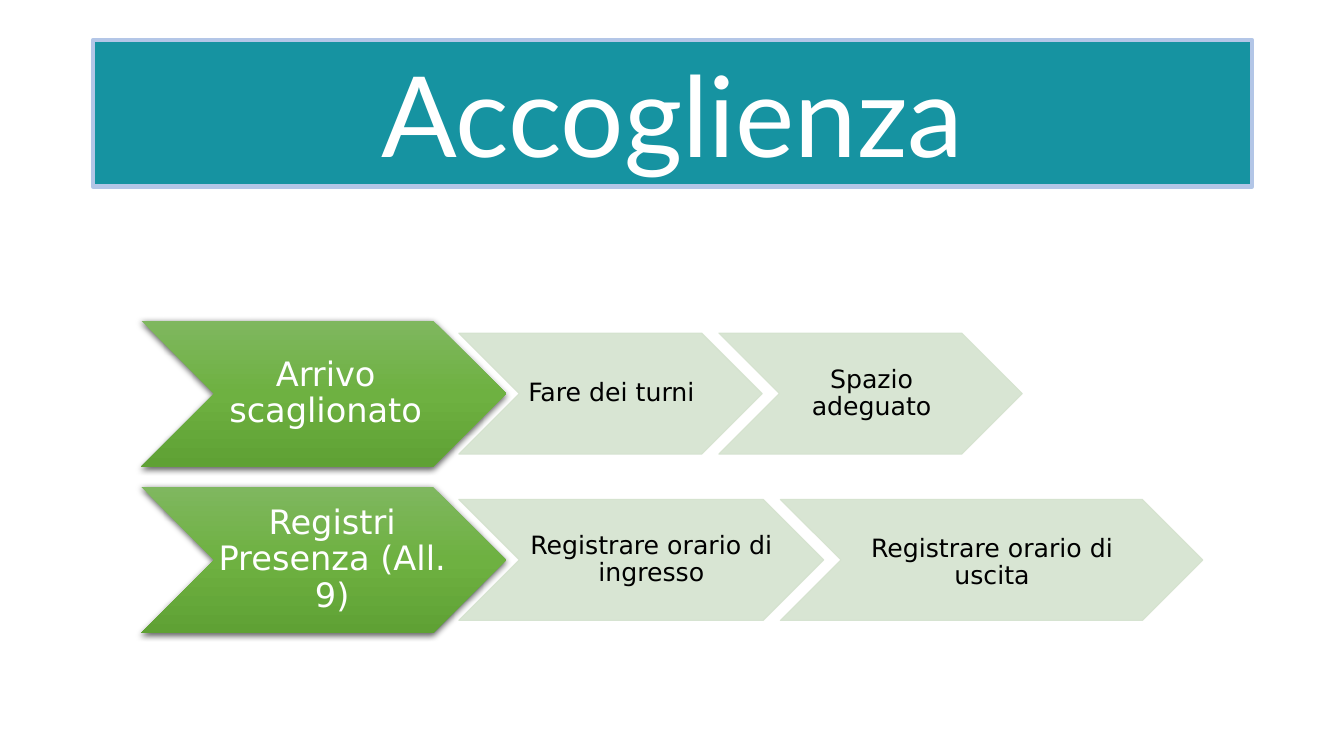
from lxml import etree
from pptx import Presentation, util as u
from pptx.dml.color import RGBColor
from pptx.enum import shapes, text
from pptx.oxml import parse_xml
from pptx.oxml.ns import nsdecls, qn


def rgb(value):
    return RGBColor.from_string(value)


def write(sp, words, size, font, color, anchor, insets):
    tf = sp.text_frame
    tf.word_wrap = True
    tf.vertical_anchor = anchor
    tf.margin_left, tf.margin_top, tf.margin_right, tf.margin_bottom = map(u.Inches, insets)
    p = tf.paragraphs[0]
    p.text = words
    p.alignment = text.PP_ALIGN.CENTER
    p.line_spacing = 0.9
    p.font.size = u.Pt(size)
    p.font.name = font
    p.font.color.rgb = rgb(color)


prs = Presentation()
prs.slide_width, prs.slide_height = u.Inches(13.33), u.Inches(7.5)
s = prs.slides.add_slide(prs.slide_layouts[6])

# Title banner
sp = s.shapes.add_shape(shapes.MSO_SHAPE.RECTANGLE, *map(u.Inches, (0.92, 0.4, 11.5, 1.45)))
sp.shadow.inherit = False
sp.fill.solid()
sp.fill.fore_color.rgb = rgb("1693A1")
sp.line.color.rgb = rgb("B3C6E7")
sp.line.width = u.Pt(3)
write(sp, "Accoglienza", 80, "Lato", "FFFFFF", text.MSO_ANCHOR.BOTTOM, (0.1, 0.05, 0.1, 0.05))

# Process rows: words, chevron width, text width, text shift (x, y)
rows = [
    [("Arrivo scaglionato", 3.62, 2.17, 0, 0),
     ("Fare dei turni", 3.01, 1.8, 0, 0),
     ("Spazio adeguato", 3.01, 1.8, 0, 0)],
    [("Registri Presenza (All. 9)", 3.62, 2.3, 0, 0),
     ("Registrare orario di ingresso", 3.62, 2.59, 0, 0),
     ("Registrare orario di uscita", 4.19, 3.03, -0.03, 0.03)],
]
ROW_TOP, ROW_STEP, LEFT = 3.18, 1.65, 1.4
HEAD_H, STEP_H = 1.45, 1.2

# Gradient and shadow of the leading chevrons
stops = "".join(f'<a:gs pos="{pos}"><a:srgbClr val="{c}"/></a:gs>'
                for pos, c in ((0, "7FB75F"), (50000, "6EB141"), (100000, "5FA134")))
GRADIENT = (f'<a:gradFill {nsdecls("a")} rotWithShape="1"><a:gsLst>{stops}</a:gsLst>'
            '<a:lin ang="5400000" scaled="0"/></a:gradFill>')
SHADOW = (f'<a:outerShdw {nsdecls("a")} blurRad="{u.Pt(4.5)}" dist="{u.Pt(1.5)}" dir="5400000" '
          'algn="ctr" rotWithShape="0"><a:srgbClr val="000000"><a:alpha val="62000"/>'
          '</a:srgbClr></a:outerShdw>')

for i, row in enumerate(rows):
    x = LEFT
    for j, (words, width, text_width, dx, dy) in enumerate(row):
        head = j == 0
        h = HEAD_H if head else STEP_H
        y = ROW_TOP + i * ROW_STEP + (HEAD_H - h) / 2
        sp = s.shapes.add_shape(shapes.MSO_SHAPE.CHEVRON, *map(u.Inches, (x, y, width, h)))
        sp.adjustments[0] = 0.5
        sp.shadow.inherit = False
        props = sp._element.spPr
        if head:
            sp.line.fill.background()
            props.find(qn("a:prstGeom")).addnext(parse_xml(GRADIENT))
            props.find(qn("a:effectLst")).append(parse_xml(SHADOW))
        else:
            sp.fill.solid()
            sp.fill.fore_color.rgb = rgb("D4E2CE")
            sp.line.color.rgb = rgb("D4E2CE")
            sp.line.width = u.Pt(0.75)
            for color in props.iter(qn("a:srgbClr")):
                etree.SubElement(color, qn("a:alpha")).set("val", "89000")

        # Label inside the chevron
        box = s.shapes.add_textbox(*map(u.Inches, (x + h / 2 + dx, y + dy, text_width, h)))
        write(box, words, 24 if head else 18, "DejaVu Sans", "FFFFFF" if head else "000000",
              text.MSO_ANCHOR.MIDDLE, (0.04 if head else 0.03, 0.02, 0, 0.02))
        x += width - (0.47 if head else 0.43)

prs.save("out.pptx")
